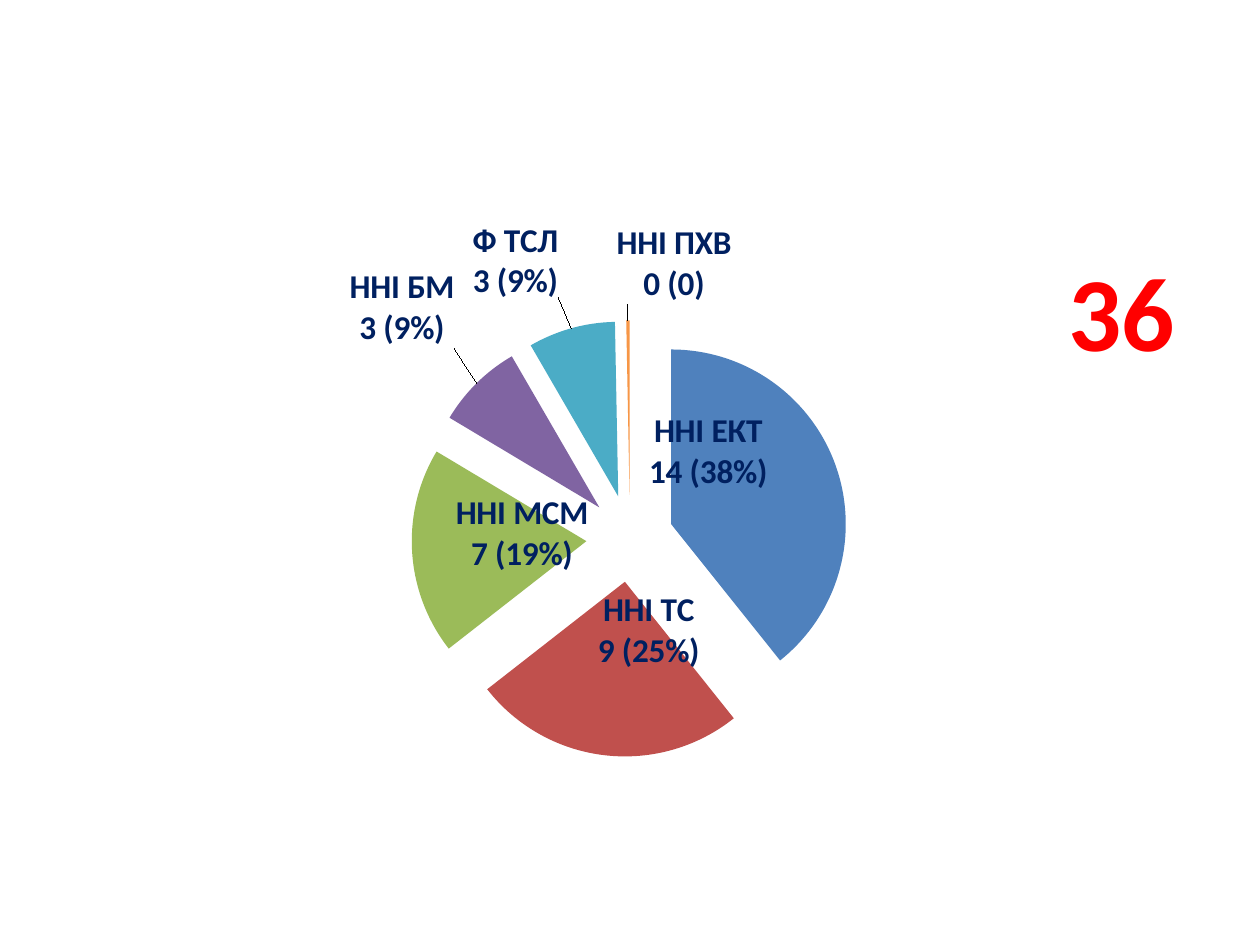
"""Build a slide with an exploded pie chart of institutes and a large red total."""
import lxml.etree
import pptx
import pptx.chart.data
import pptx.dml.color
import pptx.enum.chart
import pptx.oxml.ns
import pptx.util

Pt = pptx.util.Pt
qn = pptx.oxml.ns.qn
theme = {
    "font": "Calibri", "title": 60, "label": 19, "base": 10,
    "red": "FF0000", "navy": "002060", "black": "000000",
    "slices": ["4F81BD", "C0504D", "9BBB59", "8064A2", "4BACC6", "F79646"],
}


def write(frame, text, size, color):
    frame.text = text
    for para in frame.paragraphs:
        for item in (para, *para.runs):
            font = item.font
            font.name, font.size, font.bold = theme["font"], Pt(size), True
            font.color.rgb = pptx.dml.color.RGBColor.from_string(color)


def place(parent, index, **parts):
    for old in parent.findall(qn("c:layout")):
        parent.remove(old)
    layout = parent.makeelement(qn("c:layout"))
    parent.insert(index, layout)
    manual = lxml.etree.SubElement(layout, qn("c:manualLayout"))
    for name, value in parts.items():
        lxml.etree.SubElement(manual, qn("c:" + name)).set("val", str(value))


deck = pptx.Presentation()
deck.slide_width, deck.slide_height = Pt(720), Pt(540)
slide = deck.slides.add_slide(deck.slide_layouts[6])

data = pptx.chart.data.CategoryChartData()
data.categories = ["ННІ ТС", "ННІ EKT", "ННІ МСМ", "Ф ТСЛ", "ННІ ПХВ", "ННІ БМ"]
data.add_series("Series 1", [39, 25, 19, 8, 8, 0.3])
chart = slide.shapes.add_chart(
    pptx.enum.chart.XL_CHART_TYPE.PIE, Pt(36), Pt(126), Pt(648), Pt(356.4), data
).chart
chart.has_legend = False
chart.font.name, chart.font.size = theme["font"], Pt(theme["base"])
chart.font.color.rgb = pptx.dml.color.RGBColor.from_string(theme["black"])

chart.has_title = True
title = chart.chart_title
write(title.text_frame, "36", size=theme["title"], color=theme["red"])
place(title._element, 1, xMode="edge", yMode="edge", x=0.87, y=-0.01)
area = chart._chartSpace.chart.plotArea
place(area, 0, layoutTarget="inner", xMode="edge", yMode="edge",
      x=0.08, y=0.16, w=0.84, h=0.7)

pie = chart.plots[0]
pie.vary_by_categories = True
series = pie.series[0]
burst = series._element.makeelement(qn("c:explosion"), {"val": "25"})
series._element.find(qn("c:tx")).addnext(burst)
series.data_labels.show_percentage = True
series.data_labels.show_category_name = True
series.data_labels.show_value = False

labels = [
    ("ННІ ЕКТ\n14 (38%)", -0.04, -0.07),
    ("ННІ ТС\n9 (25%)", 0.03, -0.06),
    ("ННІ МСМ\n7 (19%)", 0.02, -0.02),
    ("ННІ БМ\n3 (9%)", -0.12, -0.22),
    ("Ф ТСЛ\n3 (9%)", -0.07, -0.25),
    ("ННІ ПХВ\n0 (0)", 0.04, -0.23),
]
for index, (text, dx, dy) in enumerate(labels):
    point = series.points[index]
    fill = point.format.fill
    fill.solid()
    fill.fore_color.rgb = pptx.dml.color.RGBColor.from_string(theme["slices"][index])
    label = point.data_label
    write(label.text_frame, text, size=theme["label"], color=theme["navy"])
    label.position = pptx.enum.chart.XL_LABEL_POSITION.CENTER
    place(series.data_labels._element.findall(qn("c:dLbl"))[index], 1, x=dx, y=dy)

deck.save("out.pptx")
